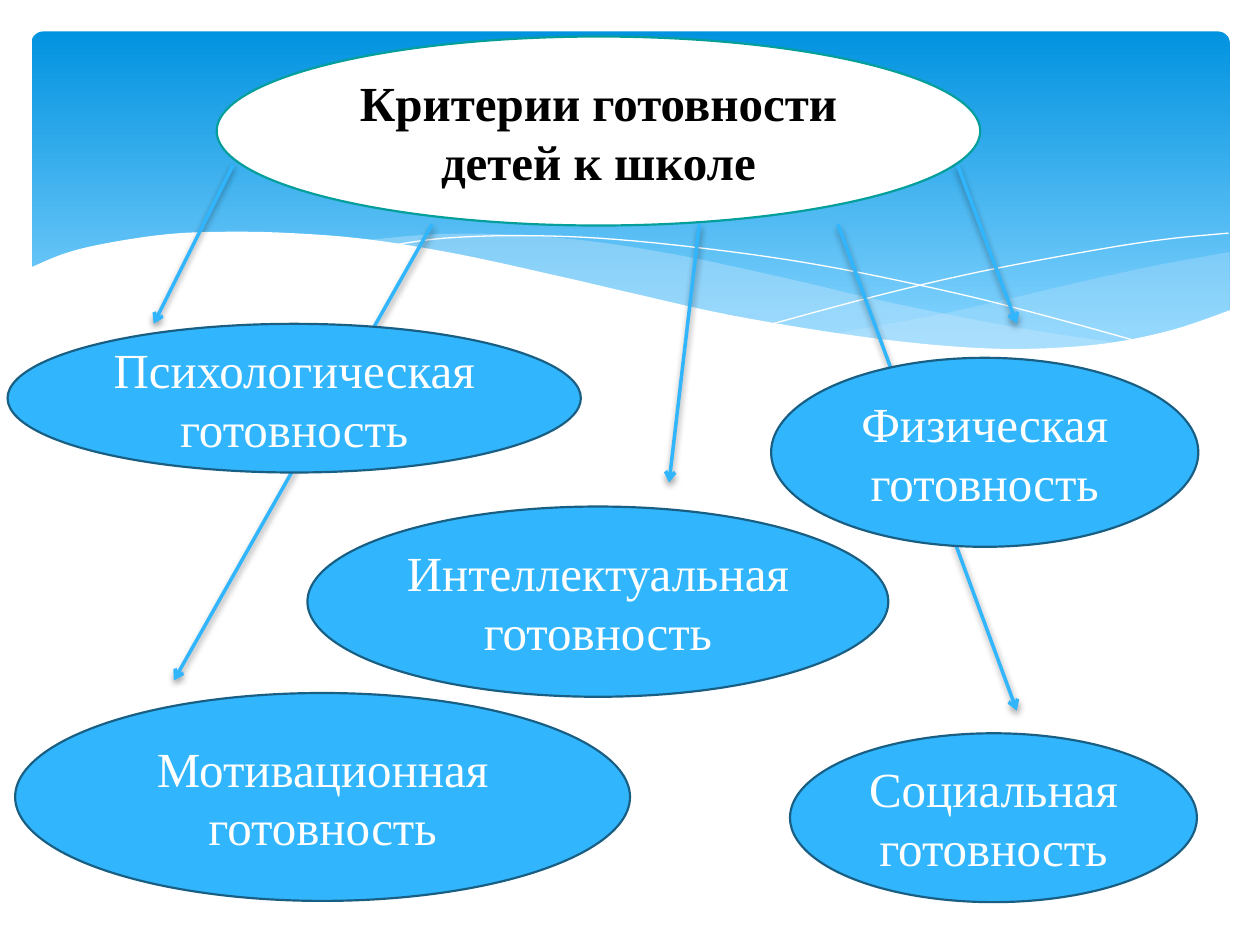
from lxml.etree import SubElement
from pptx import Presentation
from pptx.dml.color import RGBColor
from pptx.enum.shapes import MSO_CONNECTOR, MSO_SHAPE
from pptx.enum.text import MSO_ANCHOR, PP_ALIGN
from pptx.oxml.ns import qn
from pptx.util import Inches, Pt

WHITE = RGBColor(0xFF, 0xFF, 0xFF)
BLACK = RGBColor(0x00, 0x00, 0x00)
BLUE = RGBColor(0x31, 0xB6, 0xFD)
NAVY = RGBColor(0x19, 0x5F, 0x84)
TEAL = RGBColor(0x04, 0x9E, 0x9B)
SKY_TOP = RGBColor(0x02, 0x93, 0xE0)
SKY_BOTTOM = RGBColor(0x83, 0xD3, 0xFE)
HAZE = RGBColor(0xC6, 0xE7, 0xFC)
FONT = "Times New Roman"

TITLE = ("Критерии готовности детей к школе", (1.72, 0.29, 6.06, 1.5))
CRITERIA = [
    ("Социальная готовность", (6.27, 5.82, 3.23, 1.34)),
    ("Интеллектуальная готовность", (2.44, 4.02, 4.61, 1.51)),
    ("Мотивационная готовность", (0.12, 5.5, 4.88, 1.65)),
    ("Психологическая готовность", (0.06, 2.57, 4.55, 1.18)),
    ("Физическая готовность", (6.12, 2.84, 3.39, 1.5)),
]
ARROWS = [
    ((1.85, 1.31), (1.22, 2.57)),
    ((7.6, 1.31), (8.07, 2.57)),
    ((5.55, 1.78), (5.31, 3.83)),
    ((3.43, 1.78), (1.38, 5.4)),
    ((6.65, 1.78), (8.07, 5.64)),
]

# Each wave is a list of edges; every edge is a smooth curve through its points.
RIGHT_HAZE = [
    [(9.76, 2), (9.21, 2.1), (8.61, 2.23), (7.53, 2.48), (6.61, 2.65)],
    [(6.61, 2.65), (7.19, 2.72), (7.69, 2.77), (8.14, 2.78), (8.63, 2.75),
     (9.05, 2.69), (9.42, 2.59), (9.76, 2.47)],
]
LONG_HAZE = [
    [(8.93, 2.73), (8.07, 2.6), (7.06, 2.4), (6.29, 2.22), (5.41, 2.03),
     (4.65, 1.91), (3.99, 1.86), (3.44, 1.86), (2.86, 1.91)],
    [(2.86, 1.91), (3.62, 2.03), (4.49, 2.22), (5.3, 2.4), (6.01, 2.55),
     (6.8, 2.68), (7.48, 2.76), (8.07, 2.78), (8.48, 2.77), (8.93, 2.73)],
]
FALLING_LINE = [[(3.09, 1.95), (3.53, 1.89), (4.16, 1.87), (4.89, 1.9), (5.82, 2),
                 (6.65, 2.13), (7.6, 2.33), (8.31, 2.51), (9.07, 2.72)]]
RISING_LINE = [[(6.13, 2.57), (6.95, 2.35), (7.76, 2.16), (8.66, 1.99),
                (9.24, 1.9), (9.75, 1.85)]]
WHITE_WAVE = [
    [(9.77, 2.46), (9.3, 2.62), (8.75, 2.73), (8.09, 2.77), (7.44, 2.74),
     (6.68, 2.65), (5.79, 2.5), (5.03, 2.33), (4.47, 2.2), (3.65, 2.02),
     (2.92, 1.9), (2.3, 1.85), (1.77, 1.84), (1.32, 1.86), (0.85, 1.93),
     (0.52, 2.01), (0.23, 2.13)],
    [(0.23, 3.29), (9.77, 3.29)],
]


def smooth(points, steps=6):
    """Return points along a Catmull-Rom curve through the given ones."""
    padded = [points[0], *points, points[-1]]
    curve = [points[0]]
    for a, b, c, d in zip(padded, padded[1:], padded[2:], padded[3:]):
        for step in range(1, steps + 1):
            t = step / steps
            curve.append(tuple(
                0.5 * (2 * q + (r - p) * t + (2 * p - 5 * q + 4 * r - s) * t ** 2
                       + (3 * q - p - 3 * r + s) * t ** 3)
                for p, q, r, s in zip(a, b, c, d)))
    return curve


def add_wave(page, edges, fill=None, opacity=100, line=None):
    points = [(Inches(x), Inches(y)) for edge in edges for x, y in smooth(edge)]
    builder = page.shapes.build_freeform(*points[0], scale=1.0)
    builder.add_line_segments(points[1:], close=fill is not None)
    wave = builder.convert_to_shape()
    wave.shadow.inherit = False
    if fill is None:
        wave.fill.background()
    else:
        wave.fill.solid()
        wave.fill.fore_color.rgb = fill
        if opacity < 100:
            color = wave._element.spPr.find(qn("a:solidFill"))[0]
            SubElement(color, qn("a:alpha"), val=str(opacity * 1000))
    if line is None:
        wave.line.fill.background()
    else:
        wave.line.color.rgb = line
        wave.line.width = Pt(0)


def add_sky(page):
    sky = page.shapes.add_shape(MSO_SHAPE.ROUNDED_RECTANGLE, Inches(0.25), Inches(0.25),
                                Inches(9.51), Inches(2.7))
    sky.adjustments[0] = 0.034
    sky.shadow.inherit = False
    sky.line.fill.background()
    sky.fill.gradient()
    sky.fill.gradient_angle = 270
    for stop, color, position in zip(sky.fill.gradient_stops,
                                     (SKY_TOP, SKY_BOTTOM), (0, 0.9)):
        stop.color.rgb = color
        stop.position = position


def add_arrow(page, start, end):
    arrow = page.shapes.add_connector(MSO_CONNECTOR.STRAIGHT,
                                      *(Inches(value) for value in (*start, *end)))
    arrow.line.color.rgb = BLUE
    arrow.line.width = Pt(2)
    properties = arrow._element.spPr
    SubElement(properties.find(qn("a:ln")), qn("a:tailEnd"), type="arrow")
    effects = SubElement(properties, qn("a:effectLst"))
    shadow = SubElement(effects, qn("a:outerShdw"), blurRad=str(Pt(4)), dist=str(Pt(2)),
                        dir="5400000", rotWithShape="0")
    color = SubElement(shadow, qn("a:srgbClr"), val=str(BLACK))
    SubElement(color, qn("a:alpha"), val="38000")


def add_oval(page, text, place, fill=BLUE, line=NAVY, color=WHITE, bold=False):
    oval = page.shapes.add_shape(MSO_SHAPE.OVAL, *(Inches(value) for value in place))
    oval.shadow.inherit = False
    oval.fill.solid()
    oval.fill.fore_color.rgb = fill
    oval.line.color.rgb = line
    oval.line.width = Pt(1.25)
    frame = oval.text_frame
    frame.word_wrap = True
    frame.vertical_anchor = MSO_ANCHOR.MIDDLE
    para = frame.paragraphs[0]
    para.alignment = PP_ALIGN.CENTER
    span = para.add_run()
    span.text = text
    span.font.name = FONT
    span.font.size = Pt(28)
    span.font.bold = bold
    span.font.color.rgb = color


def main():
    deck = Presentation()
    deck.slide_width, deck.slide_height = Inches(10), Inches(7.5)
    page = deck.slides.add_slide(deck.slide_layouts[6])

    add_sky(page)
    add_wave(page, RIGHT_HAZE, fill=HAZE, opacity=29)
    add_wave(page, LONG_HAZE, fill=HAZE, opacity=40)
    add_wave(page, FALLING_LINE, line=WHITE)
    add_wave(page, RISING_LINE, line=WHITE)
    add_wave(page, WHITE_WAVE, fill=WHITE)

    add_oval(page, *TITLE, fill=WHITE, line=TEAL, color=BLACK, bold=True)
    for start, end in ARROWS:
        add_arrow(page, start, end)
    for text, place in CRITERIA:
        add_oval(page, text, place)

    deck.save("out.pptx")


if __name__ == "__main__":
    main()
